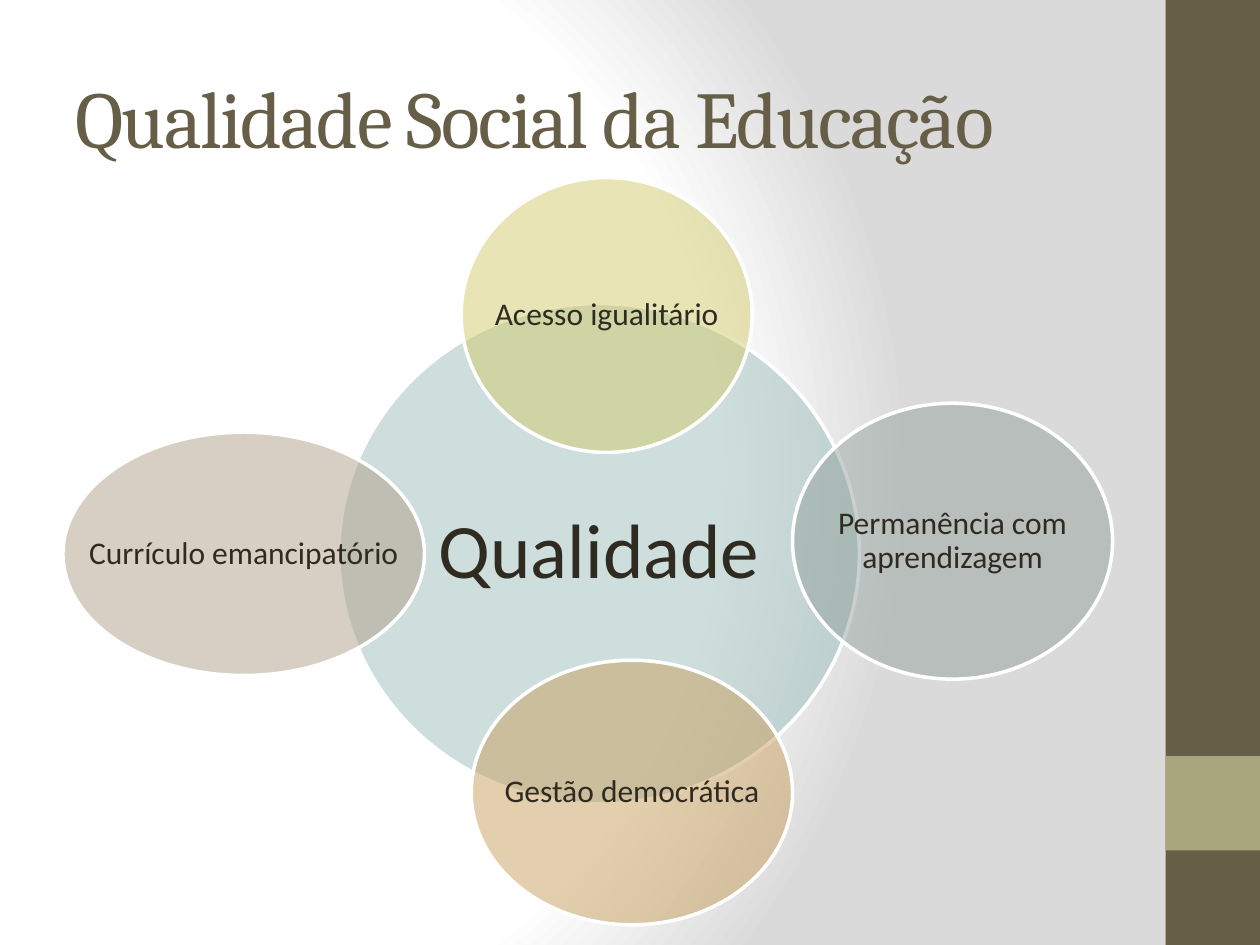
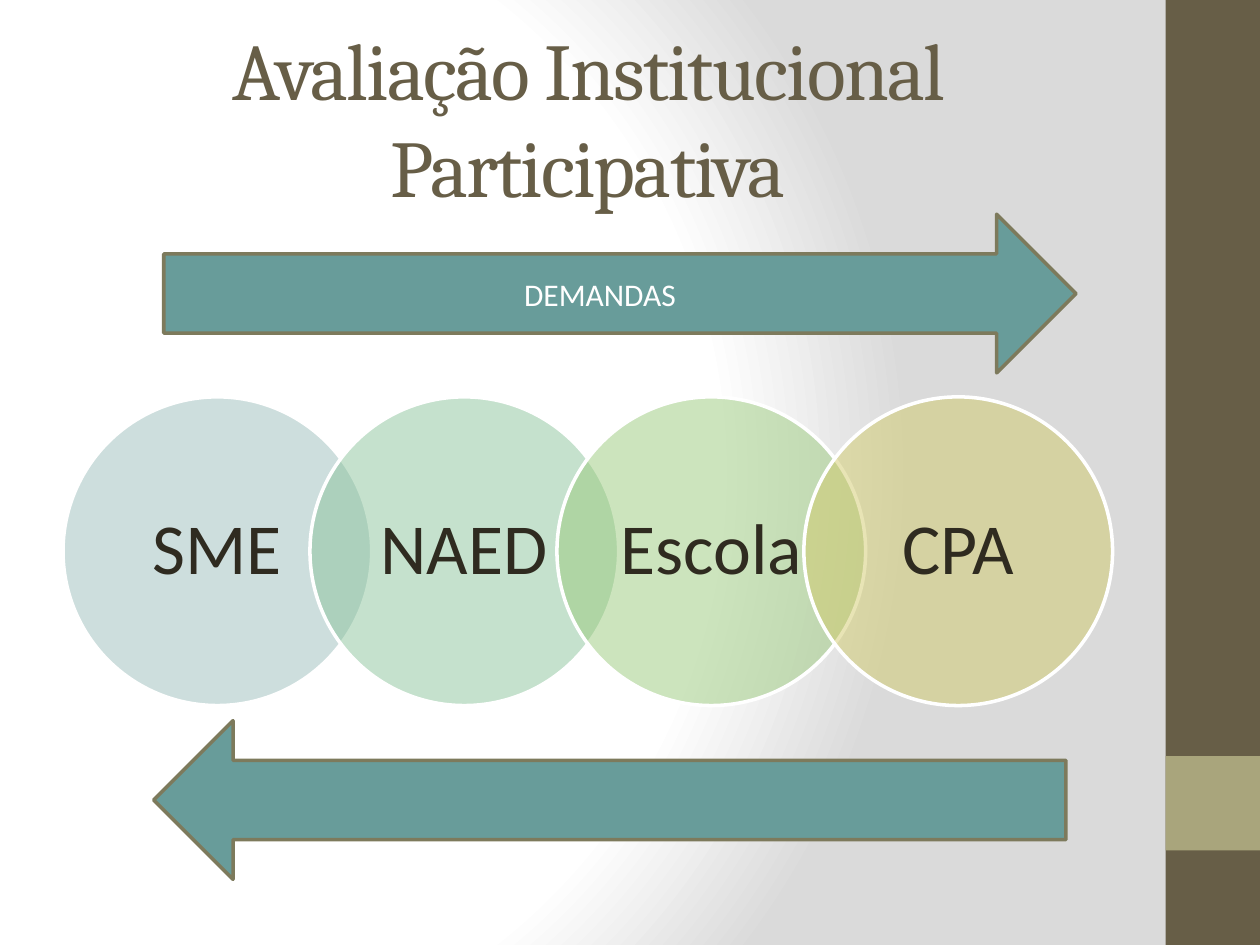
from dataclasses import dataclass

from lxml import etree
from pptx import Presentation
from pptx.dml.color import RGBColor
from pptx.enum.shapes import MSO_SHAPE
from pptx.enum.text import MSO_ANCHOR, PP_ALIGN
from pptx.oxml import parse_xml
from pptx.oxml.ns import nsdecls, qn
from pptx.util import Pt

RECTANGLE, ELLIPSE, RIGHT_ARROW = MSO_SHAPE.RECTANGLE, MSO_SHAPE.OVAL, MSO_SHAPE.RIGHT_ARROW
LEFT, CENTER = PP_ALIGN.LEFT, PP_ALIGN.CENTER
MIDDLE = MSO_ANCHOR.MIDDLE

HEADING_FONT, BODY_FONT = "Cambria", "Calibri"
WHITE = RGBColor(0xFF, 0xFF, 0xFF)
GREY = RGBColor(0xDA, 0xDA, 0xDA)
BROWN = RGBColor(0x67, 0x5E, 0x47)
OLIVE = RGBColor(0xA9, 0xA5, 0x7C)
INK = RGBColor(0x2F, 0x2B, 0x20)
TEAL = RGBColor(0x68, 0x9C, 0x9A)
ARROW_EDGE = RGBColor(0x7D, 0x7A, 0x5C)
PALE_TEAL = RGBColor(0x9C, 0xBE, 0xBD)
MINT = RGBColor(0x8D, 0xC4, 0x9D)
LEAF = RGBColor(0x9B, 0xCA, 0x7D)
YELLOW = RGBColor(0xD2, 0xCB, 0x6C)
SAGE = RGBColor(0x95, 0xA3, 0x9D)
AMBER = RGBColor(0xC8, 0x9F, 0x5D)
TAUPE = RGBColor(0xB1, 0xA0, 0x89)


@dataclass(frozen=True)
class Area:
    """Position and size in points."""
    left: float
    top: float
    width: float
    height: float

    def lengths(self):
        return Pt(self.left), Pt(self.top), Pt(self.width), Pt(self.height)


@dataclass(frozen=True)
class Bubble:
    label: str
    area: Area
    color: RGBColor
    size: float = 18
    inset_x: float = 2
    inset_y: float = 2


TITLE_AREA = Area(36, 21.6, 600, 90)
BANDS = ((Area(666, 0, 54, 540), BROWN), (Area(666, 432, 54, 54), OLIVE))

QUALITY_BUBBLES = (
    Bubble("Qualidade", Area(193.7, 173.5, 297.4, 285.8), PALE_TEAL, 44, 4.3, 4.3),
    Bubble("Acesso igualitário", Area(263.5, 101.5, 166.3, 157), YELLOW),
    Bubble("Permanência com aprendizagem", Area(452.9, 230.4, 182.9, 157.7), SAGE),
    Bubble("Gestão democrática", Area(269.3, 377.3, 183.6, 151.2), AMBER),
    Bubble("Currículo emancipatório", Area(36, 247, 206.6, 139), TAUPE),
)

# Each circle of the chain starts 80 % of a diameter after the one before
CHAIN = (("SME", PALE_TEAL), ("NAED", MINT), ("Escola", LEAF), ("CPA", YELLOW))
DIAMETER = 176.4
CHAIN_STEP = DIAMETER * 0.8


def set_background(page) -> None:
    page.background.fill.gradient()
    gradient = page.element.find(".//" + qn("p:bgPr") + "/" + qn("a:gradFill"))
    stops = "".join(
        f'<a:gs pos="{position}"><a:srgbClr val="{color}"/></a:gs>'
        for position, color in ((0, WHITE), (75000, WHITE), (100000, GREY)))
    gradient.getparent().replace(gradient, parse_xml(
        f'<a:gradFill {nsdecls("a")} rotWithShape="1"><a:gsLst>{stops}</a:gsLst>'
        '<a:path path="circle"><a:fillToRect l="20000" t="50000" r="100000" b="50000"/>'
        '</a:path></a:gradFill>'))


def add_figure(page, kind, area: Area, color: RGBColor, edge: RGBColor | None = None):
    figure = page.shapes.add_shape(kind, *area.lengths())
    figure.shadow.inherit = False
    figure.fill.solid()
    figure.fill.fore_color.rgb = color
    if edge is None:
        figure.line.fill.background()
    else:
        figure.line.color.rgb = edge
        figure.line.width = Pt(2)
    return figure


def write(box, words: str, size: float, color: RGBColor, font: str = BODY_FONT, align=CENTER):
    frame = box.text_frame
    frame.word_wrap = True
    frame.vertical_anchor = MIDDLE
    para = frame.paragraphs[0]
    para.alignment = align
    span = para.add_run()
    span.text = words
    span.font.size = Pt(size)
    span.font.name = font
    span.font.color.rgb = color
    return para


def add_bubble(page, bubble: Bubble) -> None:
    circle = add_figure(page, ELLIPSE, bubble.area, bubble.color, WHITE)
    tint = circle.fill.fore_color
    color_node = circle.element.spPr.find(qn("a:solidFill") + "/" + qn("a:srgbClr"))
    etree.SubElement(color_node, qn("a:alpha")).set("val", "50000")
    # The label may use the full width of the ellipse
    box = page.shapes.add_textbox(*bubble.area.lengths())
    frame = box.text_frame
    frame.margin_left = frame.margin_right = Pt(bubble.inset_x)
    frame.margin_top = frame.margin_bottom = Pt(bubble.inset_y)
    write(box, bubble.label, bubble.size, INK).line_spacing = 0.9


def add_arrow(page, area: Area, label: str = "", rotation: float = 0) -> None:
    arrow = add_figure(page, RIGHT_ARROW, area, TEAL, ARROW_EDGE)
    arrow.rotation = rotation
    if label:
        write(arrow, label, 18, WHITE)


def add_page(deck, title: str, align=LEFT):
    page = deck.slides.add_slide(deck.slide_layouts[6])
    set_background(page)
    for area, color in BANDS:
        add_figure(page, RECTANGLE, area, color)
    box = page.shapes.add_textbox(*TITLE_AREA.lengths())
    para = write(box, title, 46, BROWN, HEADING_FONT, align)
    para.runs[0].font._element.set("spc", "-100")
    return page


def main() -> None:
    deck = Presentation()
    deck.slide_width, deck.slide_height = Pt(720), Pt(540)

    # Quality and its four dimensions
    page = add_page(deck, "Qualidade Social da Educação")
    for bubble in QUALITY_BUBBLES:
        add_bubble(page, bubble)

    # Chain of institutions between two arrows
    page = add_page(deck, "Avaliação Institucional Participativa", CENTER)
    for index, (label, color) in enumerate(CHAIN):
        area = Area(36 + index * CHAIN_STEP, 226.8, DIAMETER, DIAMETER)
        add_bubble(page, Bubble(label, area, color, 41, 9.4, 4.3))
    add_arrow(page, Area(93.6, 122.4, 521.3, 90.7), "DEMANDAS")
    add_arrow(page, Area(87.8, 411.8, 521.3, 90.7), rotation=180)

    deck.save("out.pptx")


if __name__ == "__main__":
    main()
